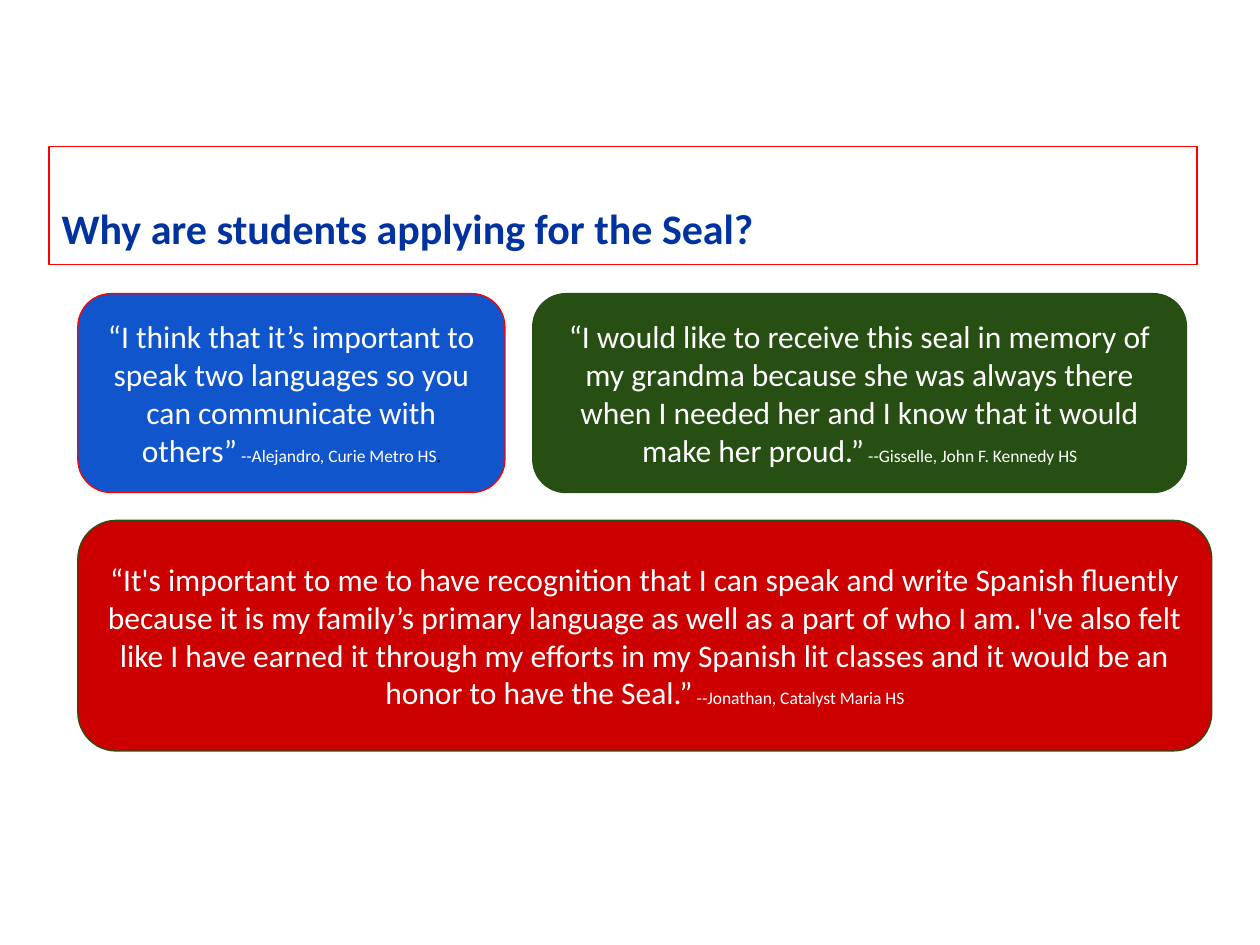
from pptx import Presentation
from pptx.dml.color import RGBColor
from pptx.enum.shapes import MSO_SHAPE
from pptx.enum.text import MSO_ANCHOR, PP_ALIGN
from pptx.util import Cm, Pt

THEME = {
    "font": "Calibri", "title_size": 24, "quote_size": 18, "source_size": 10,
    "navy": "0033A0", "blue": "1155CC", "green": "274E13", "crimson": "CC0000",
    "red": "FF0000", "white": "FFFFFF", "black": "000000",
}

TITLE = "Why are students applying for the Seal?"

# Each row: height in cm, then its cards from left to right.
ROWS = [
    (4.01, [
        {"width": 8.61, "fill": "blue", "line": "red",
         "quote": "“I think that it’s important to speak two languages so you can "
                  "communicate with others”",
         "source": " --Alejandro, Curie Metro HS", "ending": "."},
        {"width": 13.18, "fill": "green", "line": "green",
         "quote": "“I would like to receive this seal in memory of my grandma because "
                  "she was always there when I needed her and I know that it would make "
                  "her proud.”",
         "source": " --Gisselle, John F. Kennedy HS"},
    ]),
    (4.65, [
        {"width": 22.86, "fill": "crimson", "line": "green",
         "quote": "“It's important to me to have recognition that I can speak and write "
                  "Spanish fluently because it is my family’s primary language as well "
                  "as a part of who I am. I've also felt like I have earned it through "
                  "my efforts in my Spanish lit classes and it would be an honor to have "
                  "the Seal.”",
         "source": " --Jonathan, Catalyst Maria HS"},
    ]),
]
LEFT, TOP, GAP = 1.57, 5.92, 0.56


def color(name):
    return RGBColor.from_string(THEME[name])


def add_span(para, text, *, size, ink="white", bold=False):
    span = para.add_run()
    span.text = text
    span.font.name = THEME["font"]
    span.font.size = Pt(THEME[size])
    span.font.bold = bold
    span.font.color.rgb = color(ink)


def format_box(box, *, line, anchor, align):
    """Set the outline and text frame, and return the first paragraph."""
    box.line.color.rgb = color(line)
    box.line.width = Pt(0.75)
    frame = box.text_frame
    frame.word_wrap = True
    frame.vertical_anchor = anchor
    frame.margin_left = frame.margin_right = Cm(0.25)
    frame.margin_top = frame.margin_bottom = Cm(0.25)
    para = frame.paragraphs[0]
    para.alignment = align
    return para


def add_title(page):
    title = page.shapes.title
    title.left, title.top, title.width, title.height = Cm(0.99), Cm(2.95), Cm(23.14), Cm(2.39)
    para = format_box(title, line="red", anchor=MSO_ANCHOR.BOTTOM, align=PP_ALIGN.LEFT)
    add_span(para, TITLE, size="title_size", ink="navy", bold=True)


def add_card(page, card, left, top, height):
    box = page.shapes.add_shape(MSO_SHAPE.ROUNDED_RECTANGLE, Cm(left), Cm(top),
                                Cm(card["width"]), Cm(height))
    box.shadow.inherit = False
    box.fill.solid()
    box.fill.fore_color.rgb = color(card["fill"])
    para = format_box(box, line=card["line"], anchor=MSO_ANCHOR.MIDDLE,
                      align=PP_ALIGN.CENTER)
    add_span(para, card["quote"], size="quote_size")
    add_span(para, card["source"], size="source_size")
    if "ending" in card:
        add_span(para, card["ending"], size="source_size", ink="black")


def main():
    deck = Presentation()
    deck.slide_width, deck.slide_height = Cm(25.4), Cm(19.05)
    page = deck.slides.add_slide(deck.slide_layouts[5])
    add_title(page)
    top = TOP
    for height, cards in ROWS:
        left = LEFT
        for card in cards:
            add_card(page, card, left, top, height)
            left += card["width"] + GAP
        top += height + GAP
    deck.save("out.pptx")


if __name__ == "__main__":
    main()
